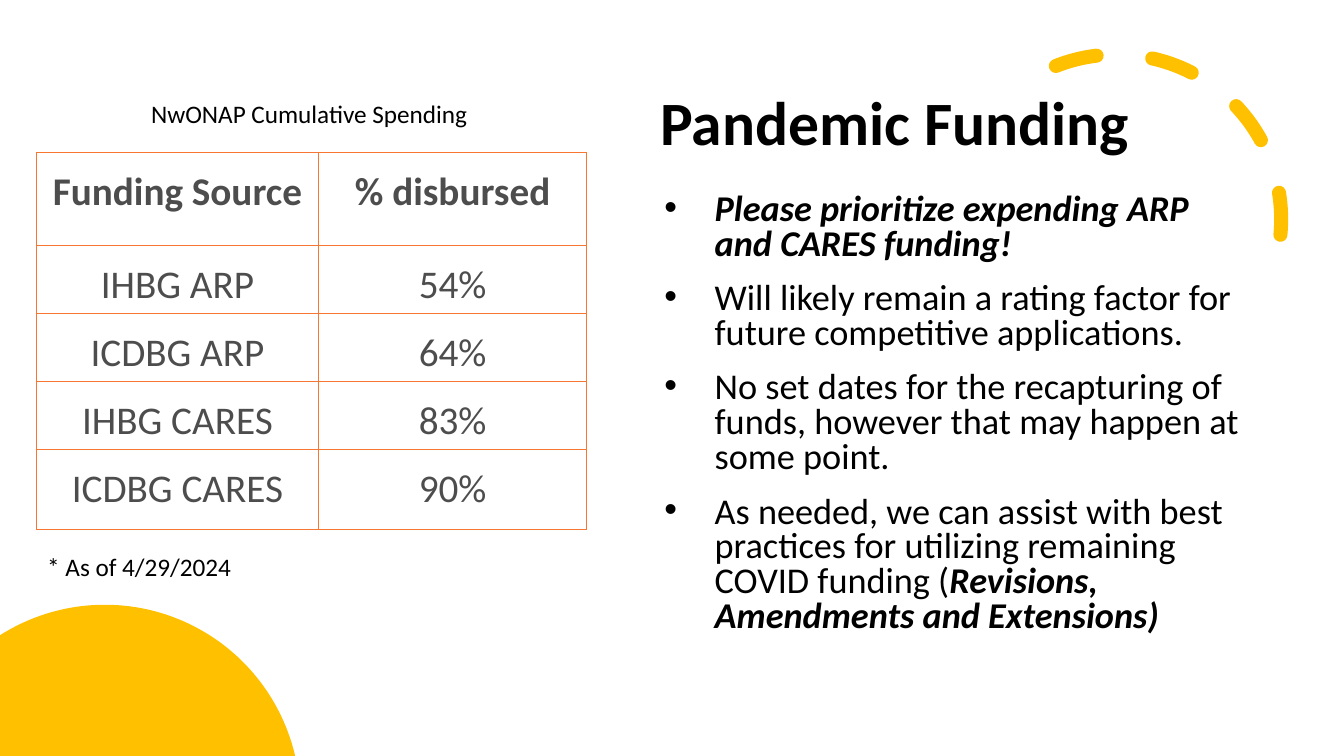
from dataclasses import dataclass
from math import acos, asin, cos, sin

from lxml.etree import SubElement
from pptx import Presentation
from pptx.dml.color import RGBColor
from pptx.enum.dml import MSO_LINE_DASH_STYLE as DashStyle
from pptx.enum.shapes import MSO_SHAPE as ShapeKind
from pptx.enum.text import MSO_ANCHOR as Anchor, MSO_AUTO_SIZE as AutoSize, PP_ALIGN as Align
from pptx.oxml.ns import qn
from pptx.util import Emu, Inches, Pt

GRID_COLUMNS, GRID_ROWS = 160, 90
CELL = Inches(7.5) / GRID_ROWS

FONT = "Calibri"
BLACK = RGBColor(0x00, 0x00, 0x00)
GRAY = RGBColor(0x4D, 0x4D, 0x4D)
GOLD = RGBColor(0xFF, 0xC0, 0x00)
ORANGE = RGBColor(0xF7, 0x77, 0x32)


@dataclass(frozen=True)
class Box:
    column: float
    row: float
    columns: float
    rows: float

    def emu(self) -> tuple[Emu, ...]:
        return tuple(map(grid, (self.column, self.row, self.columns, self.rows)))


@dataclass(frozen=True)
class Bullet:
    plain: str = ""
    emphasis: str = ""


@dataclass(frozen=True)
class Caption:
    text: str
    box: Box


BULLETS = (
    Bullet(emphasis="Please prioritize expending ARP and CARES funding!"),
    Bullet("Will likely remain a rating factor for future competitive applications."),
    Bullet("No set dates for the recapturing of funds, however that may happen at some point."),
    Bullet(
        "As needed, we can assist with best practices for utilizing remaining COVID funding (",
        "Revisions,  Amendments and Extensions)",
    ),
)
CAPTIONS = (
    Caption("NwONAP Cumulative Spending", Box(16.8, 11.16, 40.56, 4.8)),
    Caption("* As of 4/29/2024", Box(4.44, 65.04, 24.6, 4.8)),
)
SPENDING = (
    ("Funding Source", "% disbursed"),
    ("IHBG ARP", "54%"),
    ("ICDBG ARP", "64%"),
    ("IHBG CARES", "83%"),
    ("ICDBG CARES", "90%"),
)
TABLE_BOX = Box(4.32, 18.12, 65.52, 44.64)
TABLE_COLUMNS = (33.6, 31.92)
TABLE_ROWS = (11.04, 8.04, 8.04, 8.04, 9.48)


def grid(cells: float) -> Emu:
    return Emu(round(cells * CELL))


def place(shape, box: Box) -> None:
    shape.left, shape.top, shape.width, shape.height = box.emu()


def style_run(run, size: float, color: RGBColor = BLACK, bold: bool = False, italic: bool = False) -> None:
    run.font.name = FONT
    run.font.size = Pt(size)
    run.font.color.rgb = color
    run.font.bold = bold
    run.font.italic = italic


def draw_dashed_arc(slide) -> None:
    arc = slide.shapes.add_shape(ShapeKind.ARC, *Box(113.28, 6.48, 39.24, 39.24).emu())
    arc.shadow.inherit = False
    arc.adjustments[0] = 144.42
    arc.adjustments[1] = 0
    arc.rotation = 66.1
    arc.fill.background()
    arc.line.color.rgb = GOLD
    arc.line.width = Pt(10)
    arc.line.dash_style = DashStyle.DASH
    properties = arc.element.spPr
    properties.find(qn("a:xfrm")).set("flipH", "1")
    properties.find(qn("a:ln")).set("cap", "rnd")


def draw_corner_disc(slide, center_column: float, center_row: float, radius: float) -> None:
    start = -acos(-center_column / radius)
    end = -asin((center_row - GRID_ROWS) / radius)
    steps = 80
    angles = [start + (end - start) * step / steps for step in range(steps + 1)]
    rim = [
        (grid(center_column + radius * cos(angle)), grid(center_row + radius * sin(angle)))
        for angle in angles
    ]
    builder = slide.shapes.build_freeform(0, grid(GRID_ROWS))
    builder.add_line_segments(rim, close=True)
    disc = builder.convert_to_shape()
    disc.shadow.inherit = False
    disc.fill.solid()
    disc.fill.fore_color.rgb = GOLD
    disc.line.fill.background()


def write_title(slide) -> None:
    title = slide.shapes.title
    place(title, Box(77.4, 6.24, 71.64, 17.4))
    title.text_frame.text = "Pandemic Funding"
    title.text_frame.auto_size = AutoSize.NONE
    title.text_frame.vertical_anchor = Anchor.MIDDLE
    paragraph = title.text_frame.paragraphs[0]
    paragraph.alignment = Align.LEFT
    paragraph.line_spacing = 0.9
    style_run(paragraph.runs[0], 44, bold=True)


def write_bullets(slide) -> None:
    body = slide.placeholders[1]
    place(body, Box(77.88, 22.44, 71.04, 58.44))
    frame = body.text_frame
    frame.text = "\n".join(bullet.plain for bullet in BULLETS)
    frame.auto_size = AutoSize.NONE
    frame.vertical_anchor = Anchor.TOP
    for paragraph, bullet in zip(frame.paragraphs, BULLETS):
        paragraph.line_spacing = 0.8
        paragraph.space_before = Pt(0)
        paragraph.space_after = Pt(14)
        properties = paragraph._p.get_or_add_pPr()
        properties.set("marL", str(grid(6)))
        properties.set("indent", str(grid(-6)))
        SubElement(properties, qn("a:buChar"), char="•")
        for run in paragraph.runs:
            style_run(run, 25.9)
        if bullet.emphasis:
            run = paragraph.add_run()
            run.text = bullet.emphasis
            style_run(run, 25.9, bold=True, italic=True)


def outline_cell(cell) -> None:
    properties = cell._tc.get_or_add_tcPr()
    for side in ("lnL", "lnR", "lnT", "lnB"):
        border = SubElement(properties, qn(f"a:{side}"), w=str(Pt(0.5)))
        fill = SubElement(border, qn("a:solidFill"))
        SubElement(fill, qn("a:srgbClr"), val=str(ORANGE))
    cell.fill.background()


def draw_spending_table(slide) -> None:
    frame = slide.shapes.add_table(len(SPENDING), len(TABLE_COLUMNS), *TABLE_BOX.emu())
    table = frame.table
    table.first_row = table.horz_banding = False
    for column, width in zip(table.columns, TABLE_COLUMNS):
        column.width = grid(width)
    for index, (row, height, texts) in enumerate(zip(table.rows, TABLE_ROWS, SPENDING)):
        row.height = grid(height)
        for cell, text in zip(row.cells, texts):
            cell.margin_left = cell.margin_right = cell.margin_top = cell.margin_bottom = grid(0.5)
            outline_cell(cell)
            cell.text_frame.text = text
            paragraph = cell.text_frame.paragraphs[0]
            paragraph.alignment = Align.CENTER
            paragraph.line_spacing = 1.25
            paragraph.space_after = Pt(10)
            style_run(paragraph.runs[0], 28, GRAY, bold=index == 0)


def write_caption(slide, caption: Caption) -> None:
    frame = slide.shapes.add_textbox(*caption.box.emu()).text_frame
    frame.text = caption.text
    frame.word_wrap = False
    frame.auto_size = AutoSize.SHAPE_TO_FIT_TEXT
    style_run(frame.paragraphs[0].runs[0], 18)


def main() -> None:
    presentation = Presentation()
    presentation.slide_width = grid(GRID_COLUMNS)
    presentation.slide_height = grid(GRID_ROWS)
    slide = presentation.slides.add_slide(presentation.slide_layouts[1])
    draw_dashed_arc(slide)
    write_title(slide)
    draw_corner_disc(slide, 12.48, 95.26, 23.26)
    write_bullets(slide)
    draw_spending_table(slide)
    for caption in CAPTIONS:
        write_caption(slide, caption)
    presentation.save("out.pptx")


if __name__ == "__main__":
    main()
